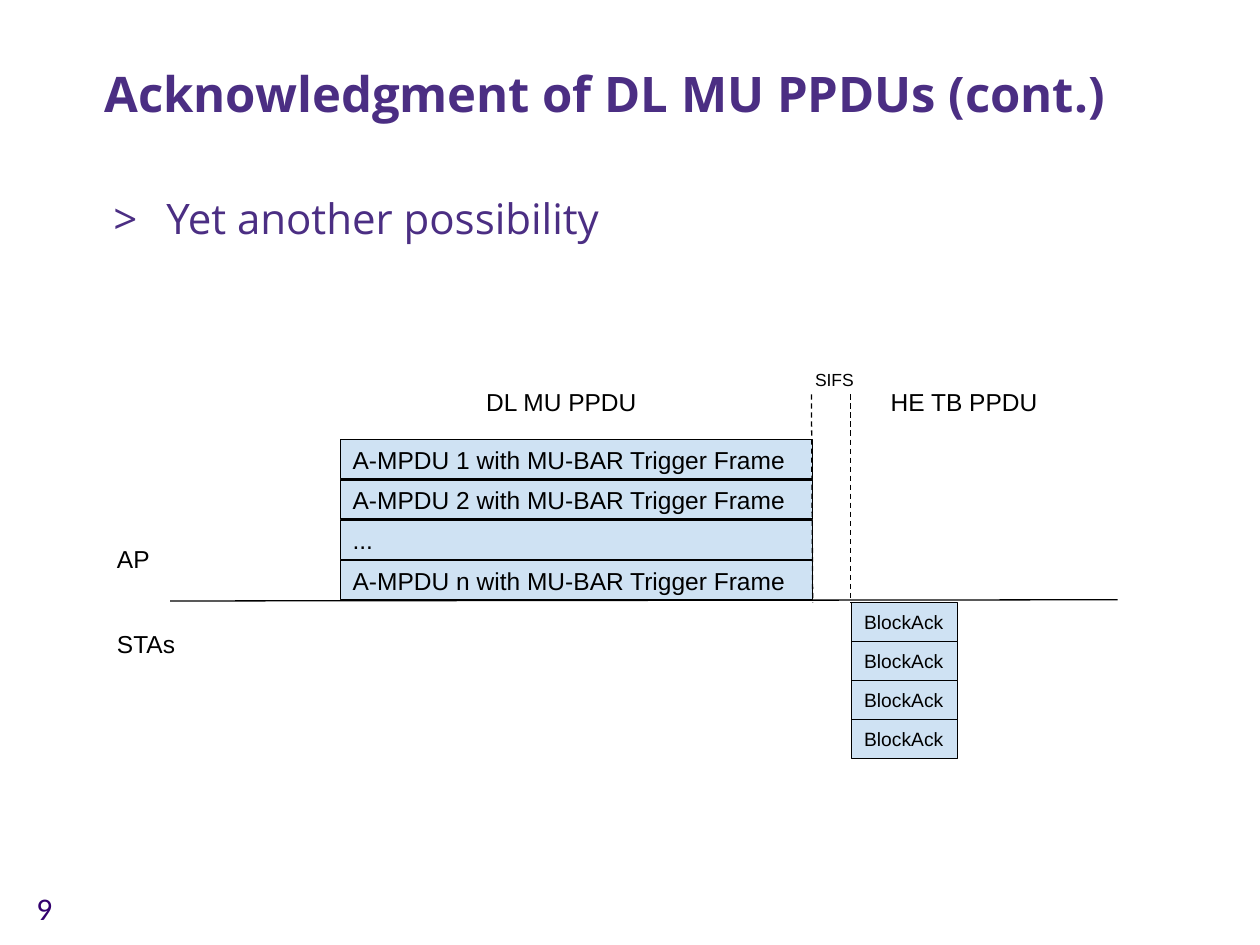
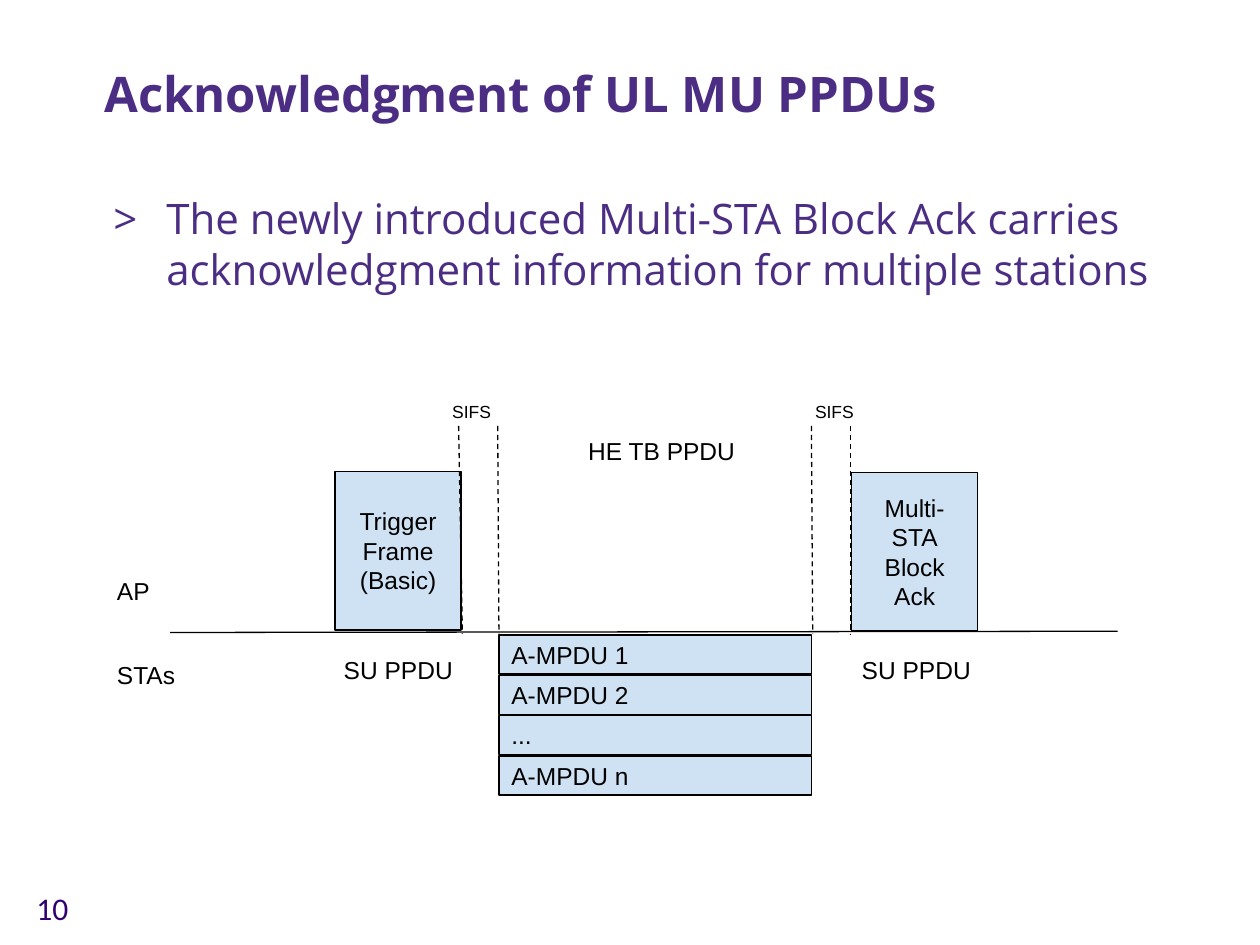
from lxml.etree import SubElement
from pptx import Presentation
from pptx.dml.color import RGBColor
from pptx.enum.dml import MSO_LINE
from pptx.enum.shapes import MSO_CONNECTOR, MSO_SHAPE
from pptx.enum.text import MSO_ANCHOR, MSO_AUTO_SIZE, PP_ALIGN
from pptx.oxml.ns import qn
from pptx.util import Inches, Pt

PURPLE = RGBColor(0x4B, 0x2E, 0x83)
DEEP_PURPLE = RGBColor(0x33, 0x00, 0x6F)
PALE_BLUE = RGBColor(0xCF, 0xE2, 0xF3)
BLACK = RGBColor(0x00, 0x00, 0x00)
HEADING_FONT = "Open Sans"
DIAGRAM_FONT = "Arial"
NUMBER_FONT = "Calibri"

FRAME_HEIGHT = 0.31
TALL_HEIGHT = 1.26

SLIDES = [
    {
        "number": "9",
        "title": "Acknowledgment of DL MU PPDUs (cont.)",
        "bullet": "Yet another possibility",
        "baseline": 4.77,
        "stacks": [
            {"at": (2.7, 3.49), "width": 3.75, "step": 0.32, "size": 14,
             "frames": ["A-MPDU 1 with MU-BAR Trigger Frame",
                        "A-MPDU 2 with MU-BAR Trigger Frame",
                        "...",
                        "A-MPDU n with MU-BAR Trigger Frame"]},
            {"at": (6.76, 4.78), "width": 0.84, "step": 0.31, "size": 11,
             "frames": ["BlockAck"] * 4},
        ],
        "tall_frames": [],
        "guides": [(6.44, 6.45), (6.75, 6.75)],
        "gaps": [6.37],
        "labels": [("DL MU PPDU", 3.76, 2.97, 1.43), ("HE TB PPDU", 6.97, 2.97, 1.57)],
    },
    {
        "number": "10",
        "title": "Acknowledgment of UL MU PPDUs",
        "bullet": "The newly introduced Multi-STA Block Ack carries "
                  "acknowledgment information for multiple stations",
        "baseline": 5.02,
        "stacks": [
            {"at": (3.96, 5.04), "width": 2.48, "step": 0.32, "size": 14,
             "frames": ["A-MPDU 1", "A-MPDU 2", "...", "A-MPDU n"]},
        ],
        "tall_frames": [("Trigger\nFrame\n(Basic)", 2.66, 3.74),
                        ("Multi-STA\nBlock Ack", 6.76, 3.75)],
        "guides": [(3.64, 3.67), (3.95, 3.96), (6.44, 6.45), (6.75, 6.75)],
        "gaps": [3.49, 6.37],
        "labels": [("HE TB PPDU", 4.57, 3.36, 1.43),
                   ("SU PPDU", 2.63, 5.1, 1.17),
                   ("SU PPDU", 6.74, 5.1, 1.08)],
    },
]


def place(shape, left, top, width, height):
    shape.left, shape.top = Inches(left), Inches(top)
    shape.width, shape.height = Inches(width), Inches(height)


def write(shape, text, size, font=DIAGRAM_FONT, color=BLACK, bold=False,
          align=PP_ALIGN.LEFT, anchor=MSO_ANCHOR.TOP, inset=0.1):
    frame = shape.text_frame
    frame.text = text
    frame.word_wrap = True
    frame.auto_size = MSO_AUTO_SIZE.NONE
    frame.vertical_anchor = anchor
    frame.margin_left = frame.margin_right = Inches(0.1)
    frame.margin_top = frame.margin_bottom = Inches(inset)
    for para in frame.paragraphs:
        para.alignment = align
        para.space_before = Pt(0)
        for span in para.runs:
            span.font.name = font
            span.font.size = Pt(size)
            span.font.bold = bold
            span.font.color.rgb = color


def add_label(page, text, left, top, width, height, size=14, **style):
    box = page.shapes.add_textbox(Inches(left), Inches(top), Inches(width), Inches(height))
    write(box, text, size, **style)


def add_frame(page, text, left, top, width, height, size=14, align=PP_ALIGN.LEFT):
    box = page.shapes.add_shape(MSO_SHAPE.RECTANGLE, Inches(left), Inches(top),
                                Inches(width), Inches(height))
    box.shadow.inherit = False
    box.fill.solid()
    box.fill.fore_color.rgb = PALE_BLUE
    box.line.color.rgb = BLACK
    box.line.width = Pt(0.75)
    write(box, text, size, align=align, anchor=MSO_ANCHOR.MIDDLE)


def add_line(page, start, end, dashed=False):
    line = page.shapes.add_connector(MSO_CONNECTOR.STRAIGHT, Inches(start[0]), Inches(start[1]),
                                     Inches(end[0]), Inches(end[1]))
    line.line.color.rgb = BLACK
    line.line.width = Pt(0.75)
    if dashed:
        line.line.dash_style = MSO_LINE.DASH
    SubElement(line._element.spPr, qn("a:effectLst"))


def add_bullet(para):
    properties = para._p.get_or_add_pPr()
    properties.set("marL", str(Inches(0.5)))
    properties.set("indent", str(Inches(-0.42)))
    color = SubElement(properties, qn("a:buClr"))
    SubElement(color, qn("a:srgbClr"), val=str(PURPLE))
    SubElement(properties, qn("a:buFont"), typeface=HEADING_FONT)
    SubElement(properties, qn("a:buChar"), char=">")


def add_headings(page, content):
    title, body = page.shapes.title, page.placeholders[1]
    place(title, 0.73, 0.42, 8.95, 0.61)
    write(title, content["title"], 28, HEADING_FONT, PURPLE, bold=True,
          anchor=MSO_ANCHOR.BOTTOM, inset=0.05)
    title.text_frame.paragraphs[0].line_spacing = 0.9
    place(body, 0.72, 1.48, 8.96, 4.87)
    write(body, content["bullet"], 24, HEADING_FONT, PURPLE, inset=0.05)
    add_bullet(body.text_frame.paragraphs[0])
    add_label(page, content["number"], 0.19, 7.01, 0.53, 0.4, 18,
              font=NUMBER_FONT, color=DEEP_PURPLE, inset=0.05)


def add_timeline(page, content):
    baseline = content["baseline"]
    add_line(page, (1.35, baseline), (8.87, baseline - 0.01))
    for stack in content["stacks"]:
        left, top = stack["at"]
        for row, text in enumerate(stack["frames"]):
            add_frame(page, text, left, top + row * stack["step"],
                      stack["width"], FRAME_HEIGHT, stack["size"])
    for text, left, top in content["tall_frames"]:
        add_frame(page, text, left, top, 1, TALL_HEIGHT, align=PP_ALIGN.CENTER)
    for upper, lower in content["guides"]:
        add_line(page, (upper, baseline - 1.64), (lower, baseline + 0.01), dashed=True)
    for left in content["gaps"]:
        add_label(page, "SIFS", left, baseline - 1.94, 0.62, 0.39, 10)
    for text, left, top, width in content["labels"]:
        add_label(page, text, left, top, width, FRAME_HEIGHT)
    for text, offset in [("AP", -0.55), ("STAs", 0.12)]:
        add_label(page, text, 0.83, baseline + offset, 0.7, 0.45)


def main():
    """Build the acknowledgment slides and save the deck."""
    deck = Presentation()
    deck.slide_width, deck.slide_height = Inches(10), Inches(7.5)
    for content in SLIDES:
        page = deck.slides.add_slide(deck.slide_layouts[1])
        add_headings(page, content)
        add_timeline(page, content)
    deck.save("out.pptx")


if __name__ == "__main__":
    main()
